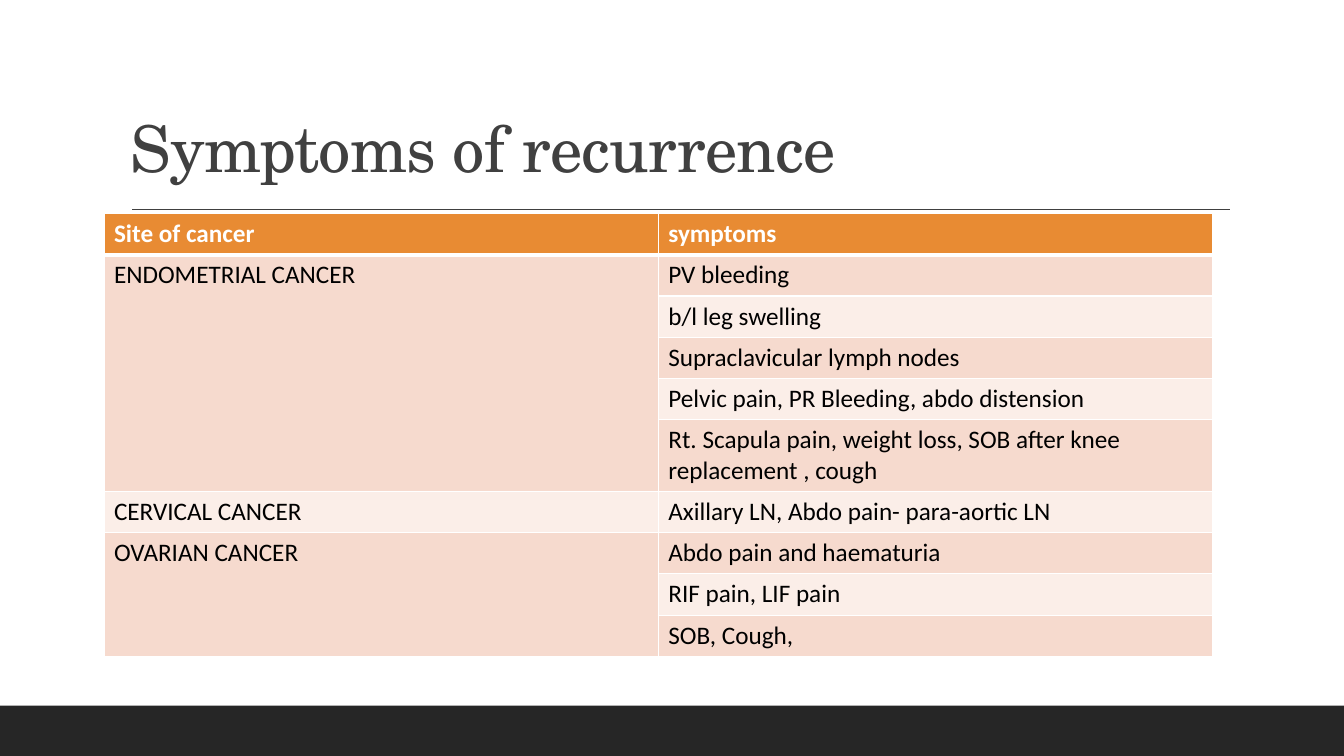
from lxml import etree
from pptx import Presentation
from pptx import util as u
from pptx.dml.color import RGBColor
from pptx.enum import shapes, text
from pptx.oxml.ns import qn

SYMPTOMS = {
    "ENDOMETRIAL CANCER": [
        "PV bleeding",
        "b/l leg swelling",
        "Supraclavicular lymph nodes",
        "Pelvic pain, PR Bleeding, abdo distension",
        "Rt. Scapula pain, weight loss, SOB after knee replacement , cough",
    ],
    "CERVICAL CANCER": ["Axillary LN, Abdo pain- para-aortic LN"],
    "OVARIAN CANCER": ["Abdo pain and haematuria", "RIF pain, LIF pain", "SOB, Cough,"],
}
ROW_HEIGHT, TWO_LINE_HEIGHT = 1.04, 1.8
TWO_LINE_ROW = 5


def colour(hex_string):
    return RGBColor.from_string(hex_string)


class SlideBuilder:
    dark, grey, white, black = "262626", "404040", "FFFFFF", "000000"
    header_fill, bands = "E88B33", ("FBEEE8", "F6DACE")
    title_font = {"name": "TeX Gyre Schola", "size": u.Pt(46)}
    header_font = {"name": "Calibri", "size": u.Pt(18), "bold": True}
    body_font = {**header_font, "bold": False}

    def __init__(self, slide):
        self.slide = slide

    def add_words(self, frame, words, font_format, font_colour):
        run = frame.paragraphs[0].add_run()
        run.text = words
        for name, value in font_format.items():
            setattr(run.font, name, value)
        run.font.color.rgb = colour(font_colour)
        return run

    def bar(self, left, top, width, height):
        footer = self.slide.shapes.add_shape(
            shapes.MSO_SHAPE.RECTANGLE, *map(u.Cm, (left, top, width, height)))
        footer.shadow.inherit = False
        footer.fill.solid()
        footer.fill.fore_color.rgb = colour(self.dark)
        footer.line.fill.background()

    def rule(self, left, right, y):
        underline = self.slide.shapes.add_connector(
            shapes.MSO_CONNECTOR.STRAIGHT, *map(u.Cm, (left, y, right, y)))
        underline.line.color.rgb = colour(self.grey)
        underline.line.width = u.Pt(1)
        etree.SubElement(underline._element.spPr, qn("a:effectLst"))

    def title(self, words, left, top, width, height):
        heading = self.slide.shapes.add_textbox(*map(u.Cm, (left, top, width, height)))
        frame = heading.text_frame
        frame.word_wrap = True
        frame.vertical_anchor = text.MSO_ANCHOR.BOTTOM
        frame.paragraphs[0].line_spacing = 0.9
        run = self.add_words(frame, words, self.title_font, self.grey)
        run._r.get_or_add_rPr().set("spc", "-50")

    def borders(self, cell, widths):
        properties = cell._tc.get_or_add_tcPr()
        for place, (side, width) in enumerate(widths.items()):
            edge = etree.Element(qn(f"a:ln{side}"), w=str(u.Pt(width)))
            fill = etree.SubElement(edge, qn("a:solidFill"))
            etree.SubElement(fill, qn("a:srgbClr"), val=self.white)
            properties.insert(place, edge)

    def table(self, headings, groups, left, top, width):
        row_count = 1 + sum(map(len, groups.values()))
        heights = [ROW_HEIGHT] * row_count
        heights[TWO_LINE_ROW] = TWO_LINE_HEIGHT
        grid = self.slide.shapes.add_table(
            row_count, len(headings), *map(u.Cm, (left, top, width, sum(heights)))).table
        grid.horz_banding = False

        # Fills and borders
        for index, height in enumerate(heights):
            grid.rows[index].height = u.Cm(height)
            for cell in grid.rows[index].cells:
                cell.fill.solid()
                cell.fill.fore_color.rgb = colour(
                    self.bands[index % 2] if index else self.header_fill)
                self.borders(cell, {"L": 1, "R": 1, "T": 3 if index == 1 else 1,
                                    "B": 1 if index else 3})

        # Wording, with each site spanning its symptoms
        for column, heading in enumerate(headings):
            self.add_words(grid.cell(0, column).text_frame, heading,
                           self.header_font, self.white)
        first = 1
        for site, symptoms in groups.items():
            site_cell = grid.cell(first, 0)
            if len(symptoms) > 1:
                site_cell.merge(grid.cell(first + len(symptoms) - 1, 0))
            self.add_words(site_cell.text_frame, site, self.body_font, self.black)
            for row, symptom in enumerate(symptoms, first):
                self.add_words(grid.cell(row, 1).text_frame, symptom,
                               self.body_font, self.black)
            first += len(symptoms)


def main():
    deck = Presentation()
    deck.slide_width, deck.slide_height = u.Cm(33.87), u.Cm(19.05)
    page = SlideBuilder(deck.slides.add_slide(deck.slide_layouts[6]))

    # Footer bar and title
    page.bar(0, 17.78, 33.87, 1.27)
    page.rule(3.33, 31, 5.28)
    page.title("Symptoms of recurrence", 3.05, 0.79, 27.94, 4.04)

    # Symptoms by cancer site
    page.table(["Site of cancer", "symptoms"], SYMPTOMS, 2.62, 5.38, 27.94)

    deck.save("out.pptx")


if __name__ == "__main__":
    main()
